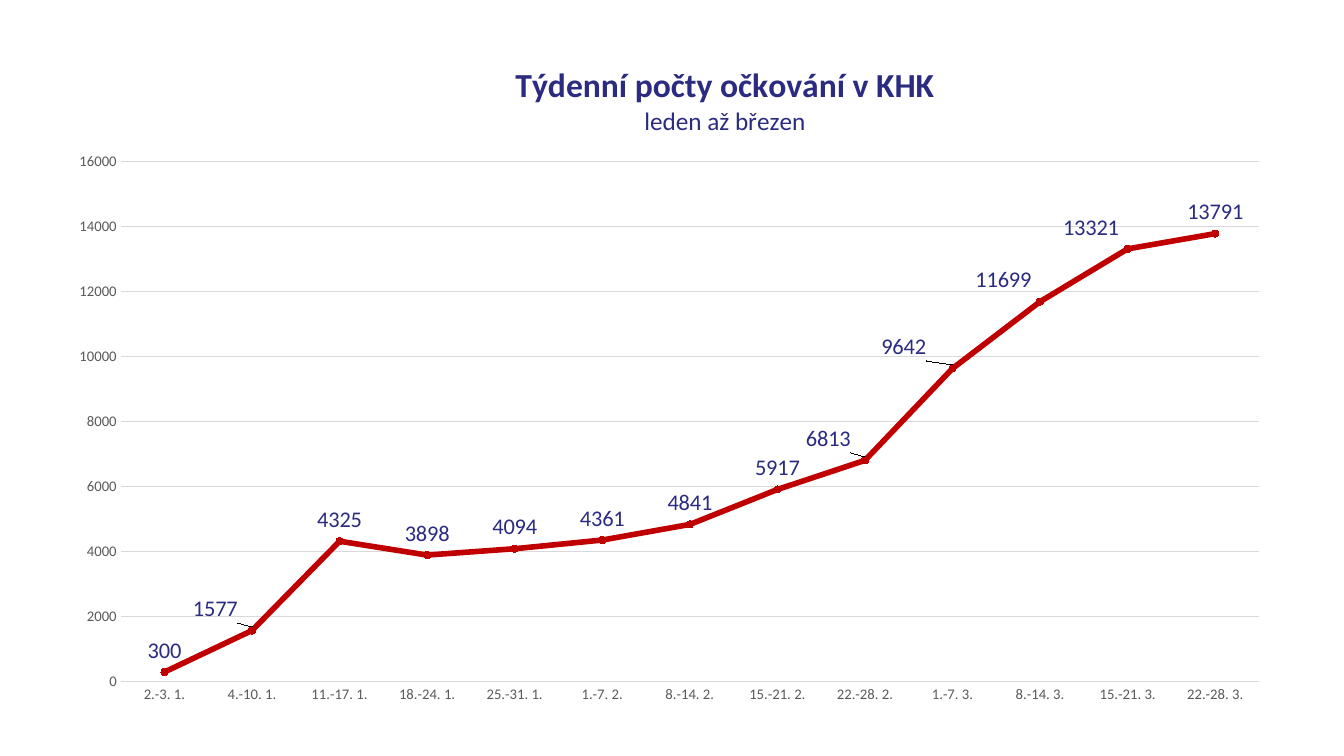
from dataclasses import dataclass

from lxml import etree
from pptx import Presentation
from pptx import util as u
from pptx.chart.data import CategoryChartData
from pptx.dml.color import RGBColor
from pptx.enum import chart as ch
from pptx.oxml.ns import qn

TITLE = "Týdenní počty očkování v KHK"
SUBTITLE = "leden až březen"
WEEKS = [
    ("2.-3. 1.", 300), ("4.-10. 1.", 1577), ("11.-17. 1.", 4325),
    ("18.-24. 1.", 3898), ("25.-31. 1.", 4094), ("1.-7. 2.", 4361),
    ("8.-14. 2.", 4841), ("15.-21. 2.", 5917), ("22.-28. 2.", 6813),
    ("1.-7. 3.", 9642), ("8.-14. 3.", 11699), ("15.-21. 3.", 13321),
    ("22.-28. 3.", 13791),
]
LABEL_SHIFTS = {1: -0.03, 8: -0.03, 9: -0.04, 10: -0.03, 11: -0.03}
SLIDE = (13.33, 7.5)
CHART_BOX = (0.59, 0.4, 12.14, 6.7)
TITLE_AT = {"x": 0.37, "y": 0.03}
PLOT_AT = {"x": 0.05, "y": 0.18, "w": 0.93, "h": 0.77}


@dataclass(frozen=True)
class Theme:
    font: str = "Calibri"
    navy: str = "2B2B82"
    red: str = "C00000"
    gray: str = "595959"
    grid: str = "D9D9D9"
    title: float = 24
    subtitle: float = 18
    label: float = 16
    axis: float = 10.5
    line: float = 4
    hairline: float = 0.75
    marker: int = 5


T = Theme()


def set_font(f, size, color, bold=False):
    f.name, f.size, f.bold = T.font, u.Pt(size), bold
    f.color.rgb = RGBColor.from_string(color)


def add_text(p, text, **fmt):
    r = p.add_run()
    r.text = text
    set_font(r.font, **fmt)


def set_line(line, color, width):
    line.color.rgb = RGBColor.from_string(color)
    line.width = u.Pt(width)


def set_layout(parent, index, fractions, edge=False, inner=False):
    for old in parent.findall(qn("c:layout")):
        parent.remove(old)
    layout = etree.Element(qn("c:layout"))
    manual = etree.SubElement(layout, qn("c:manualLayout"))
    settings = [("layoutTarget", "inner")] if inner else []
    if edge:
        settings += [("xMode", "edge"), ("yMode", "edge")]
    for tag, value in settings + list(fractions.items()):
        etree.SubElement(manual, qn("c:" + tag)).set("val", str(value))
    parent.insert(index, layout)


def style_title(chart):
    chart.has_title = True
    tf = chart.chart_title.text_frame
    add_text(tf.paragraphs[0], TITLE, size=T.title, color=T.navy, bold=True)
    add_text(tf.add_paragraph(), SUBTITLE, size=T.subtitle, color=T.navy)
    set_layout(chart.chart_title._element, 1, TITLE_AT, edge=True)


def style_axes(chart):
    for axis in (chart.category_axis, chart.value_axis):
        axis.major_tick_mark = axis.minor_tick_mark = ch.XL_TICK_MARK.NONE
        set_font(axis.tick_labels.font, T.axis, T.gray)
    set_line(chart.category_axis.format.line, T.grid, T.hairline)
    values = chart.value_axis
    values.format.line.fill.background()
    values.minimum_scale, values.maximum_scale, values.major_unit = 0, 16000, 2000
    set_line(values.major_gridlines.format.line, T.grid, T.hairline)


def style_series(plot):
    plot.vary_by_categories = False
    plot.has_data_labels = True
    labels = plot.data_labels
    labels.show_value = True
    labels.position = ch.XL_LABEL_POSITION.ABOVE
    set_font(labels.font, T.label, T.navy)

    series = plot.series[0]
    series.smooth = False
    set_line(series.format.line, T.red, T.line)
    marker = series.marker
    marker.style, marker.size = ch.XL_MARKER_STYLE.CIRCLE, T.marker
    marker.format.fill.solid()
    marker.format.fill.fore_color.rgb = RGBColor.from_string(T.red)
    set_line(marker.format.line, T.red, T.hairline)

    own = series.data_labels
    own.show_value = True
    own.position = ch.XL_LABEL_POSITION.ABOVE
    set_font(own.font, T.label, T.navy)
    for week, shift in LABEL_SHIFTS.items():
        label = series.points[week].data_label
        set_font(label.font, T.label, T.navy)
        label.position = ch.XL_LABEL_POSITION.ABOVE
        entry = own._element.find(f"{qn('c:dLbl')}[{list(LABEL_SHIFTS).index(week) + 1}]")
        set_layout(entry, 1, {"x": shift, "y": 0})


def main():
    prs = Presentation()
    prs.slide_width, prs.slide_height = map(u.Inches, SLIDE)
    s = prs.slides.add_slide(prs.slide_layouts[6])
    data = CategoryChartData()
    data.categories = [week for week, _ in WEEKS]
    data.add_series("Series 1", [count for _, count in WEEKS])
    chart = s.shapes.add_chart(
        ch.XL_CHART_TYPE.LINE_MARKERS, *map(u.Inches, CHART_BOX), data
    ).chart
    set_font(chart.font, 10, "000000")
    chart.has_legend = False
    style_title(chart)
    style_axes(chart)
    style_series(chart.plots[0])
    plot_area = chart._chartSpace.find(f".//{qn('c:plotArea')}")
    set_layout(plot_area, 0, PLOT_AT, edge=True, inner=True)
    prs.save("out.pptx")


if __name__ == "__main__":
    main()
